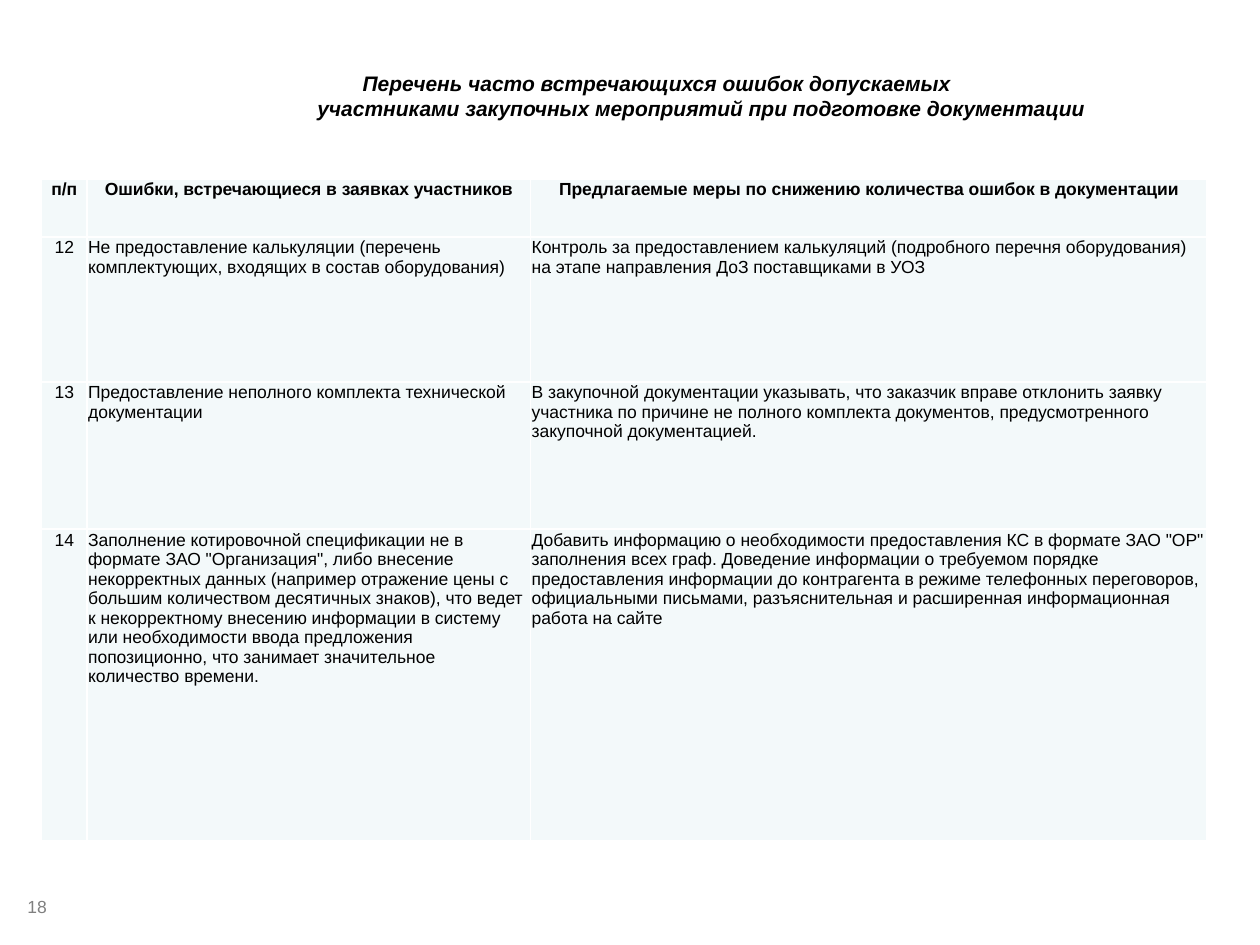
from lxml import etree
from pptx import Presentation
from pptx.dml.color import RGBColor
from pptx.enum import text
from pptx.oxml import ns
from pptx.util import Inches, Pt

BLACK = RGBColor(0x00, 0x00, 0x00)
GREY = RGBColor(0x80, 0x80, 0x80)
WHITE = RGBColor(0xFF, 0xFF, 0xFF)
PALE = RGBColor(0xF3, 0xF9, 0xFA)

TITLE_LINES = [
    ("Перечень часто встречающихся ошибок допускаемых", 1.11),
    ("участниками закупочных мероприятий при подготовке документации", 0.75),
]
COLUMN_WIDTHS = [0.36, 3.52, 5.37]
ROW_HEIGHTS = [0.46, 1.15, 1.17, 2.47]
ERROR_ROWS = [
    ("п/п", "Ошибки, встречающиеся в заявках участников",
     "Предлагаемые меры по снижению количества ошибок в документации"),
    ("12", "Не предоставление калькуляции (перечень комплектующих, входящих в состав оборудования)",
     "Контроль за предоставлением калькуляций (подробного перечня оборудования) "
     "на этапе направления ДоЗ поставщиками в УОЗ"),
    ("13", "Предоставление неполного комплекта технической документации",
     "В закупочной документации указывать, что заказчик вправе отклонить заявку участника "
     "по причине не полного комплекта документов, предусмотренного закупочной документацией."),
    ("14", "Заполнение котировочной спецификации не в формате ЗАО \"Организация\", либо внесение "
     "некорректных данных (например отражение цены с большим количеством десятичных знаков), "
     "что ведет к некорректному внесению информации в систему или необходимости ввода предложения "
     "попозиционно, что занимает значительное количество времени.",
     "Добавить информацию о необходимости предоставления КС в формате ЗАО \"ОР\" заполнения "
     "всех граф. Доведение информации о требуемом порядке предоставления информации до "
     "контрагента в режиме телефонных переговоров, официальными письмами, разъяснительная "
     "и расширенная информационная работа на сайте"),
]


def style_font(font, color=BLACK, **formats):
    font.color.rgb = color
    for key, value in {"name": "Arial", "size": Pt(10), **formats}.items():
        setattr(font, key, value)


def add_frame(slide, left, top, width, height):
    frame = slide.shapes.add_textbox(
        Inches(left), Inches(top), Inches(width), Inches(height)).text_frame
    frame.word_wrap = True
    return frame


def add_title(slide):
    title = add_frame(slide, 1.67, 0.51, 7.81, 0.44)
    title.vertical_anchor = text.MSO_ANCHOR.MIDDLE
    title.margin_top = Inches(0.11)
    for index, (wording, indent) in enumerate(TITLE_LINES):
        line = title.paragraphs[0] if index == 0 else title.add_paragraph()
        line.text = wording
        line._p.get_or_add_pPr().set("marL", str(Inches(indent)))
        style_font(line.font, size=Pt(12), bold=True, italic=True)


def add_page_number(slide):
    number = add_frame(slide, 0.12, 7.06, 3.17, 0.36).paragraphs[0]
    number.text = "18"
    style_font(number.font, GREY)


def add_borders(cell):
    properties = cell._tc.get_or_add_tcPr()
    for index, side in enumerate(("a:lnL", "a:lnR", "a:lnT", "a:lnB")):
        border = etree.Element(ns.qn(side), w=str(Pt(1)))
        fill = etree.SubElement(border, ns.qn("a:solidFill"))
        etree.SubElement(fill, ns.qn("a:srgbClr"), val=str(WHITE))
        properties.insert(index, border)


def fill_cell(cell, wording, centred, bold):
    margins = {"margin_left": 0.01, "margin_right": 0.01, "margin_top": 0.01, "margin_bottom": 0}
    for key, value in margins.items():
        setattr(cell, key, Inches(value))
    cell.fill.solid()
    cell.fill.fore_color.rgb = PALE
    add_borders(cell)
    paragraph = cell.text_frame.paragraphs[0]
    paragraph.text = wording
    paragraph.alignment = text.PP_ALIGN.CENTER if centred else text.PP_ALIGN.LEFT
    style_font(paragraph.font, bold=bold)


def add_error_table(slide):
    table = slide.shapes.add_table(
        len(ROW_HEIGHTS), len(COLUMN_WIDTHS), Inches(0.33), Inches(1.42),
        Inches(sum(COLUMN_WIDTHS)), Inches(sum(ROW_HEIGHTS))).table
    for column, width in zip(table.columns, COLUMN_WIDTHS):
        column.width = Inches(width)
    for row, height in zip(table.rows, ROW_HEIGHTS):
        row.height = Inches(height)
    for r, wordings in enumerate(ERROR_ROWS):
        for c, wording in enumerate(wordings):
            fill_cell(table.cell(r, c), wording, centred=r == 0 or c == 0, bold=r == 0)


def main():
    deck = Presentation()
    deck.slide_width, deck.slide_height = Inches(10), Inches(7.5)
    slide = deck.slides.add_slide(deck.slide_layouts[6])
    add_title(slide)
    add_page_number(slide)
    add_error_table(slide)
    deck.save("out.pptx")


if __name__ == "__main__":
    main()
